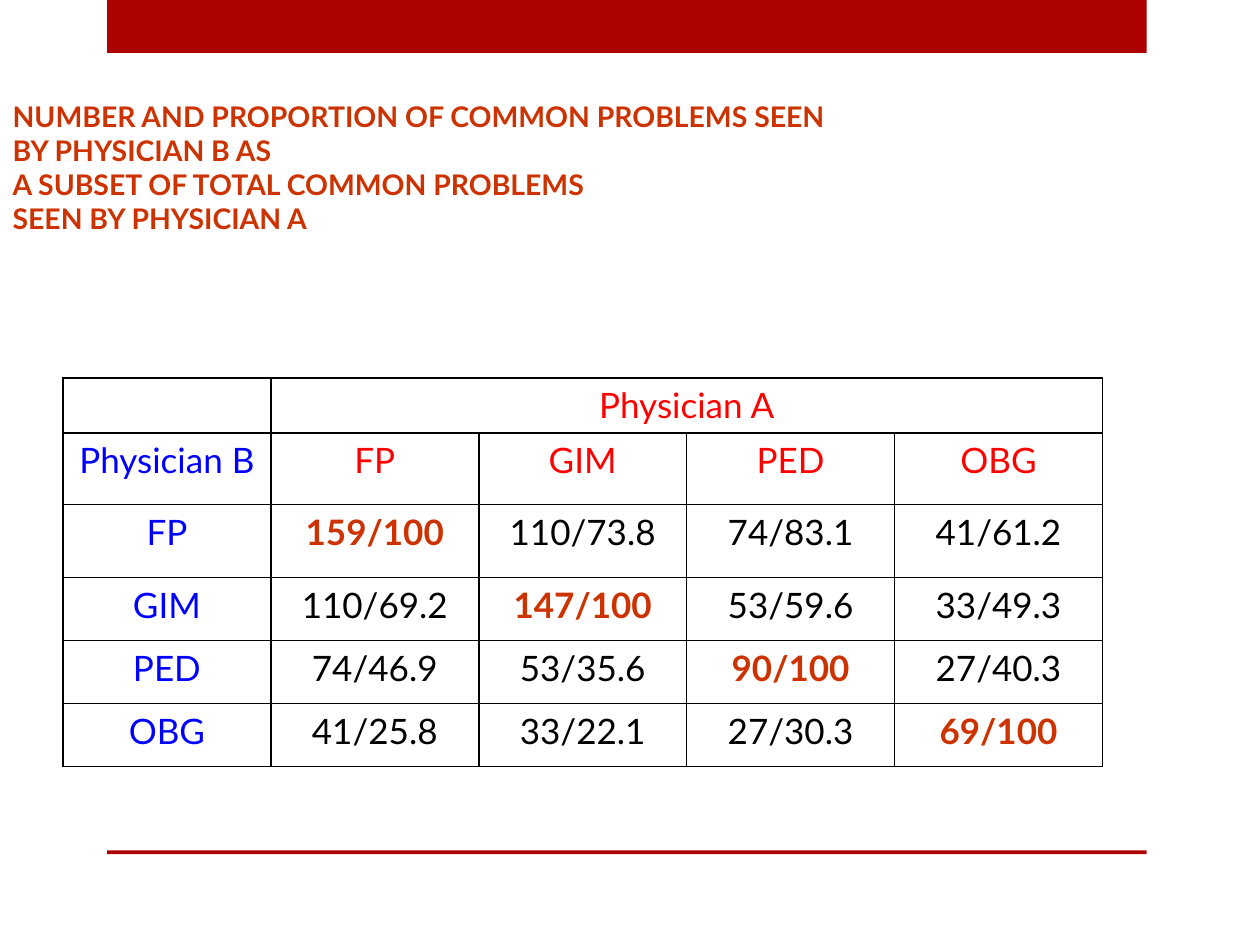
"""Build a slide comparing common problems seen by pairs of physician specialties."""
from lxml import etree
from pptx import Presentation
from pptx.dml.color import RGBColor
from pptx.enum.shapes import MSO_SHAPE
from pptx.enum.text import MSO_ANCHOR, MSO_AUTO_SIZE, PP_ALIGN
from pptx.oxml.ns import qn
from pptx.util import Inches, Pt

RECTANGLE = MSO_SHAPE.RECTANGLE
LEFT, CENTER = PP_ALIGN.LEFT, PP_ALIGN.CENTER
BOTTOM = MSO_ANCHOR.BOTTOM
NO_FIT = MSO_AUTO_SIZE.NONE

FONT = "Lato"
COLORS = {
    "band": "AD0101",
    "accent": "CC3300",
    "physician_a": "FF0000",
    "physician_b": "0000FF",
    "value": "000000",
    "border": "000000",
}


def add_run(paragraph, text, size, color, bold=False):
    run = paragraph.add_run()
    run.text = text
    run.font.name = FONT
    run.font.size = Pt(size)
    run.font.bold = bold
    run.font.color.rgb = RGBColor.from_string(COLORS[color])


def add_borders(cell):
    properties = cell._tc.get_or_add_tcPr()
    for side in ("lnL", "lnR", "lnT", "lnB"):
        line = etree.SubElement(properties, qn(f"a:{side}"), w=str(Pt(1)))
        fill = etree.SubElement(line, qn("a:solidFill"))
        etree.SubElement(fill, qn("a:srgbClr"), val=COLORS["border"])


prs = Presentation()
prs.slide_width, prs.slide_height = Inches(10), Inches(7.5)
slide = prs.slides.add_slide(prs.slide_layouts[5])

for top, height in ((0, 0.42), (6.75, 0.03)):
    band = slide.shapes.add_shape(
        RECTANGLE, Inches(0.85), Inches(top), Inches(8.25), Inches(height)
    )
    band.shadow.inherit = False
    band.fill.solid()
    band.fill.fore_color.rgb = RGBColor.from_string(COLORS["band"])
    band.line.fill.background()

title = slide.shapes.title
title.left, title.top = Inches(0), Inches(0.67)
title.width, title.height = Inches(9), Inches(1.25)
title.text_frame.word_wrap = True
title.text_frame.auto_size = NO_FIT
title.text_frame.vertical_anchor = BOTTOM
heading = title.text_frame.paragraphs[0]
heading.alignment = LEFT
heading_lines = (
    "NUMBER AND PROPORTION OF COMMON PROBLEMS SEEN",
    "BY PHYSICIAN B AS ",
    "A SUBSET OF TOTAL COMMON PROBLEMS",
    "SEEN BY PHYSICIAN A",
)
for index, text in enumerate(heading_lines):
    if index:
        heading.add_line_break()
    add_run(heading, text, 16.2, "accent", bold=True)

rows = (
    ("", "Physician A", "", "", ""),
    ("Physician B", "FP", "GIM", "PED", "OBG"),
    ("FP", "159/100", "110/73.8", "74/83.1", "41/61.2"),
    ("GIM", "110/69.2", "147/100", "53/59.6", "33/49.3"),
    ("PED", "74/46.9", "53/35.6", "90/100", "27/40.3"),
    ("OBG", "41/25.8", "33/22.1", "27/30.3", "69/100"),
)
row_heights = (0.43, 0.57, 0.58, 0.5, 0.5, 0.5)
problems = slide.shapes.add_table(
    len(rows), len(rows[0]), Inches(0.5), Inches(3), Inches(8.25), Inches(sum(row_heights))
).table
problems.first_row = problems.horz_banding = False
for column in problems.columns:
    column.width = Inches(1.65)
problems.cell(0, 1).merge(problems.cell(0, 4))

for r, (row, height) in enumerate(zip(rows, row_heights)):
    problems.rows[r].height = Inches(height)
    for c, text in enumerate(row):
        cell = problems.cell(r, c)
        add_borders(cell)
        cell.fill.background()
        if not text:
            continue
        same_specialty = r == c + 1 and c > 0
        if c == 0:
            color = "physician_b"
        elif r < 2:
            color = "physician_a"
        else:
            color = "accent" if same_specialty else "value"
        paragraph = cell.text_frame.paragraphs[0]
        paragraph.alignment = CENTER
        indent = paragraph._p.get_or_add_pPr()
        indent.set("marL", str(Inches(0.38)))
        indent.set("indent", str(Inches(-0.38)))
        add_run(paragraph, text, 20, color, bold=same_specialty)

prs.save("out.pptx")
